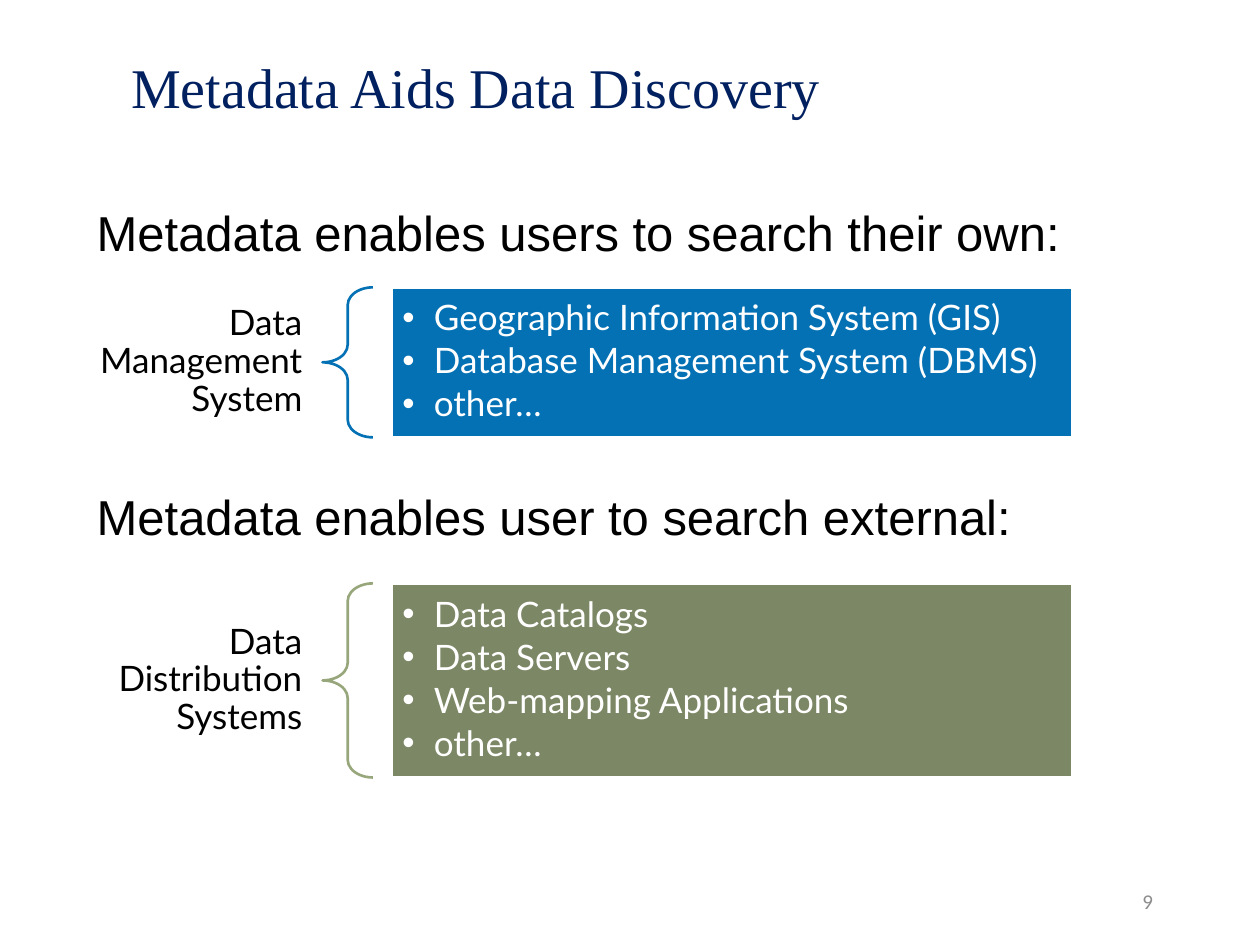
from dataclasses import dataclass

from lxml.etree import SubElement
from pptx import Presentation
from pptx.dml.color import RGBColor
from pptx.enum.shapes import MSO_SHAPE
from pptx.enum.text import MSO_ANCHOR, PP_ALIGN
from pptx.oxml.ns import qn
from pptx.util import Pt


@dataclass(frozen=True)
class Theme:
    navy: str = "002060"
    black: str = "000000"
    white: str = "FFFFFF"
    gray: str = "8C8C8C"
    title_font: str = "Times New Roman"
    heading_font: str = "Arial"
    body_font: str = "Lato"
    number_font: str = "Calibri"
    title_size: int = 32
    heading_size: int = 28
    body_size: int = 20
    number_size: int = 12


THEME = Theme()
TITLE = "Metadata Aids Data Discovery"
PAGE_NUMBER = "9"
SECTIONS = [
    dict(
        heading="Metadata enables users to search their own:",
        label="Data Management System",
        systems=["Geographic Information System (GIS)",
                 "Database Management System (DBMS)", "other…"],
        brace_color="0471B4", panel_color="0471B4",
        heading_top=112.3, top=164.2, height=85.7,
    ),
    dict(
        heading="Metadata enables user to search external:",
        label="Data Distribution Systems",
        systems=["Data Catalogs", "Data Servers",
                 "Web-mapping Applications", "other…"],
        brace_color="98A67C", panel_color="7C8765",
        heading_top=274.5, top=333.4, height=110.9,
    ),
]

LABEL_LEFT, LABEL_WIDTH = 41, 143.3
BRACE_WIDTH, BRACE_GAP = 28.8, 10.8
PANEL_WIDTH = 389
HEADING_LEFT, HEADING_WIDTH, HEADING_HEIGHT = 48.2, 617.8, 42
LINE_WIDTH = 1.5
BULLET_INDENT = 18


def add_run(paragraph, text, font, size, color):
    run = paragraph.add_run()
    run.text = text
    run.font.name = font
    run.font.size = Pt(size)
    run.font.color.rgb = RGBColor.from_string(color)


def set_frame(frame, anchor, side=7.2, edge=3.6):
    frame.word_wrap = True
    frame.vertical_anchor = anchor
    frame.margin_left = frame.margin_right = Pt(side)
    frame.margin_top = frame.margin_bottom = Pt(edge)


def add_text(slide, box, text, font, size, color, align=PP_ALIGN.LEFT,
             anchor=MSO_ANCHOR.MIDDLE, spacing=1.0, **insets):
    frame = slide.shapes.add_textbox(*map(Pt, box)).text_frame
    set_frame(frame, anchor, **insets)
    paragraph = frame.paragraphs[0]
    paragraph.alignment = align
    paragraph.line_spacing = spacing
    add_run(paragraph, text, font, size, color)


def add_outlined(slide, preset, box, line_color):
    shape = slide.shapes.add_shape(preset, *map(Pt, box))
    shape.shadow.inherit = False
    shape.line.color.rgb = RGBColor.from_string(line_color)
    shape.line.width = Pt(LINE_WIDTH)
    return shape


def add_bullet(paragraph):
    properties = paragraph._p.get_or_add_pPr()
    properties.set("marL", str(Pt(BULLET_INDENT)))
    properties.set("indent", str(-Pt(BULLET_INDENT)))
    SubElement(properties, qn("a:buFont"), typeface="Arial")
    SubElement(properties, qn("a:buChar"), char="•")


def fill_panel(panel, systems):
    frame = panel.text_frame
    set_frame(frame, MSO_ANCHOR.MIDDLE, side=6, edge=6)
    for index, system in enumerate(systems):
        paragraph = frame.add_paragraph() if index else frame.paragraphs[0]
        add_bullet(paragraph)
        paragraph.alignment = PP_ALIGN.LEFT
        paragraph.line_spacing = 0.9
        paragraph.space_after = Pt(3)
        add_run(paragraph, system, THEME.body_font, THEME.body_size, THEME.white)


def add_section(slide, section):
    top, height = section["top"], section["height"]
    add_text(slide, (HEADING_LEFT, section["heading_top"], HEADING_WIDTH, HEADING_HEIGHT),
             section["heading"], THEME.heading_font, THEME.heading_size, THEME.black,
             anchor=MSO_ANCHOR.TOP)
    add_text(slide, (LABEL_LEFT, top, LABEL_WIDTH, height), section["label"],
             THEME.body_font, THEME.body_size, THEME.black,
             align=PP_ALIGN.RIGHT, spacing=0.9, side=11.5, edge=4.3)

    brace_left = LABEL_LEFT + LABEL_WIDTH
    brace = add_outlined(slide, MSO_SHAPE.LEFT_BRACE,
                         (brace_left, top, BRACE_WIDTH, height), section["brace_color"])
    brace.fill.background()
    brace.adjustments[0] = 0.35
    brace.adjustments[1] = 0.5

    panel_left = brace_left + BRACE_WIDTH + BRACE_GAP
    panel = add_outlined(slide, MSO_SHAPE.RECTANGLE,
                         (panel_left, top, PANEL_WIDTH, height), THEME.white)
    panel.fill.solid()
    panel.fill.fore_color.rgb = RGBColor.from_string(section["panel_color"])
    fill_panel(panel, section["systems"])


def add_title(slide):
    title = slide.shapes.title
    title.left, title.top, title.width, title.height = map(Pt, (67.7, 23.8, 598.3, 56.2))
    set_frame(title.text_frame, MSO_ANCHOR.MIDDLE)
    paragraph = title.text_frame.paragraphs[0]
    paragraph.alignment = PP_ALIGN.LEFT
    paragraph.line_spacing = 0.9
    add_run(paragraph, TITLE, THEME.title_font, THEME.title_size, THEME.navy)


def main():
    deck = Presentation()
    deck.slide_width, deck.slide_height = Pt(720), Pt(540)
    slide = deck.slides.add_slide(deck.slide_layouts[5])
    add_title(slide)
    for section in SECTIONS:
        add_section(slide, section)
    add_text(slide, (504, 500.4, 162, 28.8), PAGE_NUMBER, THEME.number_font,
             THEME.number_size, THEME.gray, align=PP_ALIGN.RIGHT)
    deck.save("out.pptx")


if __name__ == "__main__":
    main()
